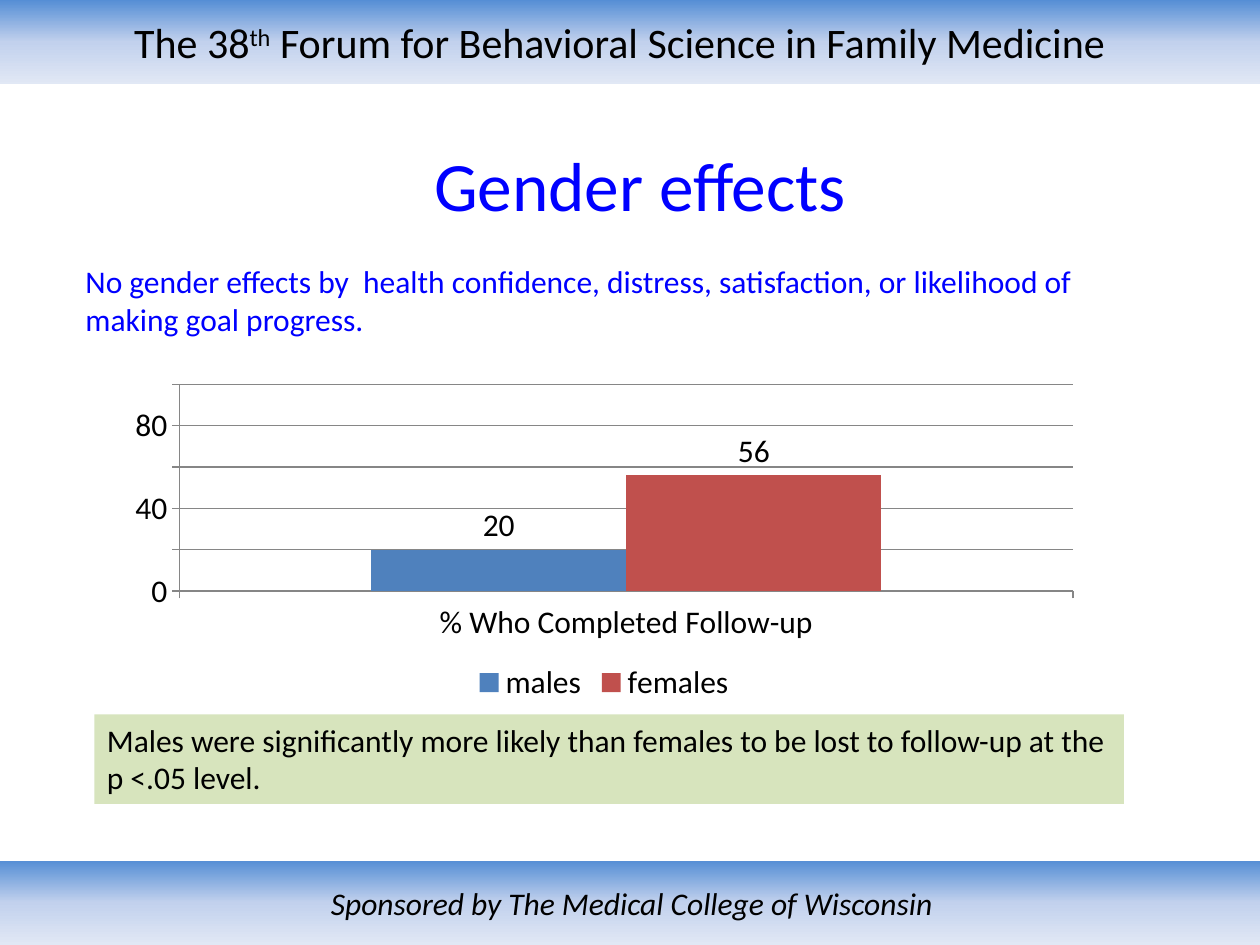
from copy import deepcopy

from pptx import Presentation
from pptx.chart.data import CategoryChartData
from pptx.dml.color import RGBColor
from pptx.enum.chart import XL_CHART_TYPE as Kind, XL_LABEL_POSITION as Spot
from pptx.enum.chart import XL_LEGEND_POSITION as Side, XL_TICK_MARK as Tick
from pptx.enum.shapes import MSO_SHAPE as Form
from pptx.enum.text import MSO_ANCHOR as Anchor, PP_ALIGN as Align
from pptx.util import Inches, Pt

FONT = "Calibri"
COLORS = {
    "ink": "000000",
    "blue": "0000FF",
    "note": "D7E4BD",
    "top": "558ED5",
    "mid": "C2D1ED",
    "low": "E1E8F5",
    "males": "4F81BD",
    "females": "C0504D",
    "grid": "868686",
}


def rgb(name):
    return RGBColor.from_string(COLORS[name])


def style(font, size=18, color="ink", italic=False):
    font.name = FONT
    font.size = Pt(size)
    font.italic = italic
    font.color.rgb = rgb(color)


def write(shape, text, align=Align.LEFT, anchor=Anchor.TOP, raised=None, **look):
    frame = shape.text_frame
    frame.word_wrap = True
    frame.vertical_anchor = anchor
    para = frame.paragraphs[0]
    para.alignment = align
    for part in [text] if isinstance(text, str) else text:
        run = para.add_run()
        run.text = part
        style(run.font, **look)
        if part == raised:
            run.font._element.set("baseline", "30000")


def block(slide, box):
    shape = slide.shapes.add_shape(Form.RECTANGLE, *map(Inches, box))
    shape.shadow.inherit = False
    shape.line.fill.background()
    return shape


def add_band(slide, box, text, **look):
    band = block(slide, box)
    fill = band.fill
    fill.gradient()
    fill.gradient_angle = 270
    first = fill.gradient_stops[0]._gs
    first.addnext(deepcopy(first))
    for stop, place, name in zip(fill.gradient_stops, (0, 0.5, 1), ("top", "mid", "low")):
        stop.position = place
        stop.color.rgb = rgb(name)
    write(band, text, align=Align.CENTER, anchor=Anchor.MIDDLE, **look)
    return band


def add_title(slide, box, text):
    title = slide.shapes.title
    title.left, title.top, title.width, title.height = map(Inches, box)
    write(title, text, align=Align.CENTER, anchor=Anchor.MIDDLE, size=39.6, color="blue")


def add_text(slide, box, text):
    write(slide.shapes.add_textbox(*map(Inches, box)), text, color="blue")


def add_note(slide, box, text):
    note = block(slide, box)
    note.fill.solid()
    note.fill.fore_color.rgb = rgb("note")
    write(note, text)


def add_bars(slide, box, label, values):
    data = CategoryChartData()
    data.categories = [label]
    for name, value in values.items():
        data.add_series(name, [value])
    chart = slide.shapes.add_chart(Kind.COLUMN_CLUSTERED, *map(Inches, box), data).chart
    chart.has_title = False
    style(chart.font)
    chart.has_legend = True
    chart.legend.position = Side.BOTTOM
    chart.legend.include_in_layout = False

    scale = chart.value_axis
    scale.minimum_scale, scale.maximum_scale, scale.major_unit = 0, 100, 20
    scale.has_major_gridlines = True
    for axis in (chart.category_axis, scale):
        axis.major_tick_mark = Tick.OUTSIDE
    for line in (scale.major_gridlines.format.line, scale.format.line,
                 chart.category_axis.format.line):
        line.color.rgb = rgb("grid")
        line.width = Pt(0.75)

    plot = chart.plots[0]
    plot.vary_by_categories = False
    plot.gap_width = 150
    plot.overlap = 0
    for series in plot.series:
        series.format.fill.solid()
        series.format.fill.fore_color.rgb = rgb(series.name)
        labels = series.data_labels
        labels.show_value = True
        labels.position = Spot.OUTSIDE_END
        style(labels.font)


def main():
    deck = Presentation()
    deck.slide_width, deck.slide_height = Inches(10), Inches(7.5)
    slide = deck.slides.add_slide(deck.slide_layouts[5])
    head = add_band(
        slide, (0, 0, 10, 0.67),
        ["The 38", "th", " Forum for Behavioral Science in Family Medicine"],
        raised="th", size=24)
    head.text_frame.margin_right = Inches(0.26)
    add_band(slide, (0, 6.83, 10.03, 0.67),
             "Sponsored by The Medical College of Wisconsin", italic=True)
    add_title(slide, (0.58, 1.08, 9, 0.75), "Gender effects")
    add_bars(slide, (0.92, 3, 7.75, 2.62), "% Who Completed Follow-up",
             {"males": 20, "females": 56})
    add_text(slide, (0.58, 2.03, 8.58, 0.71),
             "No gender effects by  health confidence, distress, satisfaction, "
             "or likelihood of making goal progress.")
    add_note(slide, (0.75, 5.67, 8.17, 0.71),
             "Males were significantly more likely than females to be lost to "
             "follow-up at the p <.05 level.")
    deck.save("out.pptx")


if __name__ == "__main__":
    main()
